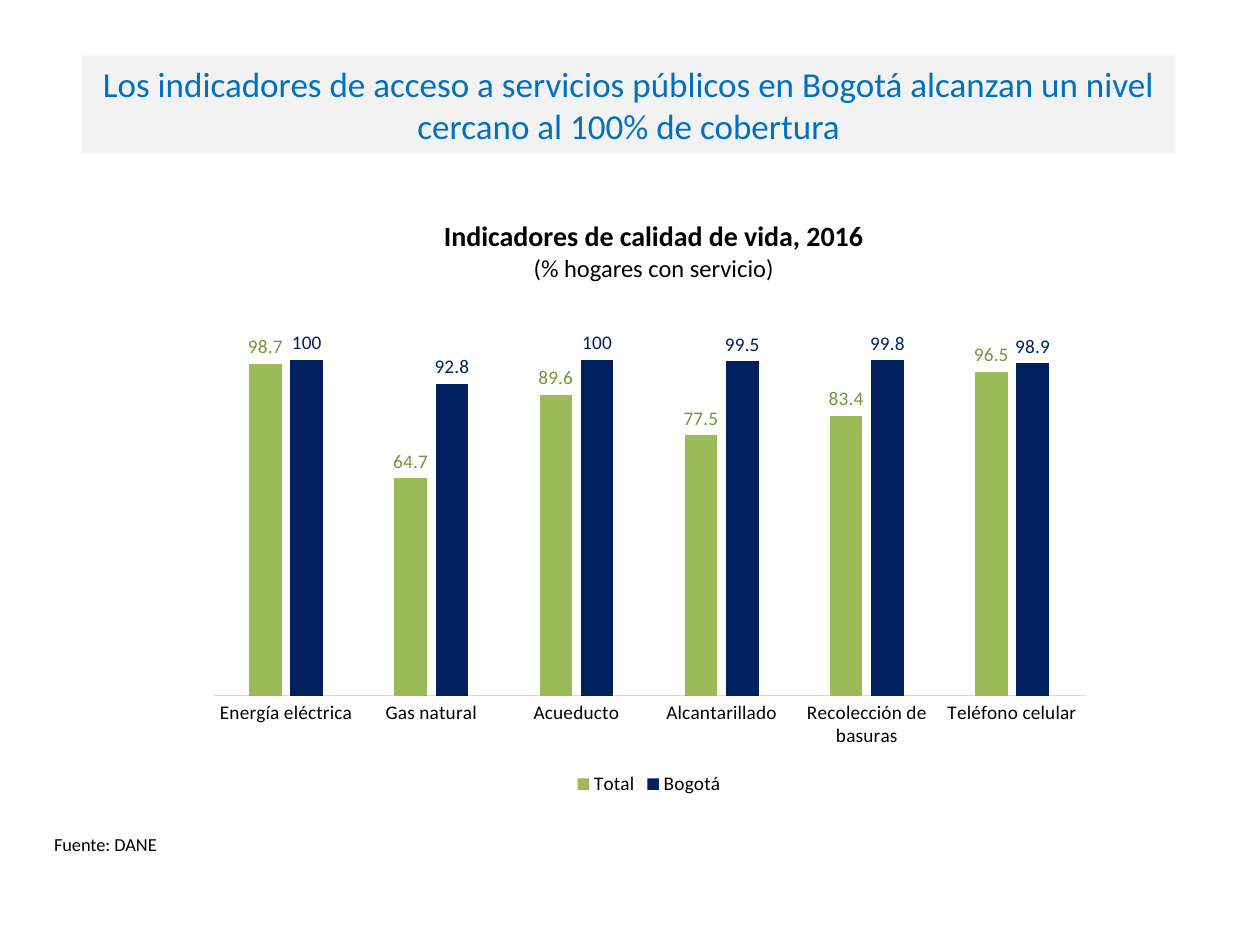
from pptx import Presentation
from pptx.chart.data import CategoryChartData
from pptx.dml.color import RGBColor
from pptx.enum import chart as charts, shapes, text
from pptx.util import Cm, Pt

FONT = "Calibri"
BLACK = RGBColor(0x00, 0x00, 0x00)
WHITE = RGBColor(0xFF, 0xFF, 0xFF)
PALE_GREY = RGBColor(0xF2, 0xF2, 0xF2)
AXIS_GREY = RGBColor(0xD9, 0xD9, 0xD9)
BLUE = RGBColor(0x00, 0x70, 0xC0)
GREEN = RGBColor(0x9B, 0xBB, 0x59)
DARK_GREEN = RGBColor(0x77, 0x93, 0x3C)
NAVY = RGBColor(0x00, 0x20, 0x60)


def style_font(font, size, color, bold=False):
    font.name = FONT
    font.size = Pt(size)
    font.color.rgb = color
    font.bold = bold


deck = Presentation()
deck.slide_width = Cm(25.4)
deck.slide_height = Cm(19.05)
page = deck.slides.add_slide(deck.slide_layouts[6])

banners = [
    ("Fuente: DANE", (0.84, 16.64, 3.1, 0.76), WHITE, 10.5, BLACK, text.PP_ALIGN.LEFT),
    ("Los indicadores de acceso a servicios públicos en Bogotá alcanzan un nivel "
     "cercano al 100% de cobertura",
     (1.65, 1.12, 22.05, 1.96), PALE_GREY, 20, BLUE, text.PP_ALIGN.CENTER),
]
for wording, place, fill, size, color, alignment in banners:
    box = page.shapes.add_shape(shapes.MSO_SHAPE.RECTANGLE, *map(Cm, place))
    box.shadow.inherit = False
    box.fill.solid()
    box.fill.fore_color.rgb = fill
    box.line.fill.background()
    box.text_frame.word_wrap = True
    box.text_frame.vertical_anchor = text.MSO_ANCHOR.MIDDLE
    box.text_frame.text = wording
    para = box.text_frame.paragraphs[0]
    para.alignment = alignment
    style_font(para.runs[0].font, size, color)

heading = page.shapes.add_textbox(Cm(7.49), Cm(4.29), Cm(11.38), Cm(1.55))
heading.text_frame.word_wrap = True
para = heading.text_frame.paragraphs[0]
para.text = "Indicadores de calidad de vida, 2016\v(% hogares con servicio)"
para.alignment = text.PP_ALIGN.CENTER
title_span, unit_span = para.runs
style_font(title_span.font, 16, BLACK, True)
style_font(unit_span.font, 14, BLACK)

series_styles = [
    ("Total", (98.7, 64.7, 89.6, 77.5, 83.4, 96.5), GREEN, DARK_GREEN),
    ("Bogotá", (100, 92.8, 100, 99.5, 99.8, 98.9), NAVY, NAVY),
]
data = CategoryChartData()
data.categories = ["Energía eléctrica", "Gas natural", "Acueducto",
                   "Alcantarillado", "Recolección de basuras", "Teléfono celular"]
for name, values, _, _ in series_styles:
    data.add_series(name, values)

chart = page.shapes.add_chart(
    charts.XL_CHART_TYPE.COLUMN_CLUSTERED,
    Cm(3.94), Cm(5.69), Cm(18.29), Cm(10.46), data).chart
style_font(chart.font, 10, BLACK)
chart.has_title = False
chart.has_legend = True
chart.legend.position = charts.XL_LEGEND_POSITION.BOTTOM
chart.legend.include_in_layout = False
style_font(chart.legend.font, 11, BLACK)

category_axis = chart.category_axis
category_axis.major_tick_mark = charts.XL_TICK_MARK.NONE
category_axis.format.line.color.rgb = AXIS_GREY
category_axis.format.line.width = Pt(0.75)
style_font(category_axis.tick_labels.font, 11, BLACK)

value_axis = chart.value_axis
value_axis.visible = False
value_axis.has_major_gridlines = False
value_axis.minimum_scale = 0
value_axis.maximum_scale = 120

plot = chart.plots[0]
plot.gap_width = 219
plot.overlap = -27
plot.vary_by_categories = False
for series, (_, _, fill, label_color) in zip(plot.series, series_styles):
    series.format.fill.solid()
    series.format.fill.fore_color.rgb = fill
    labels = series.data_labels
    labels.show_value = True
    labels.position = charts.XL_LABEL_POSITION.OUTSIDE_END
    style_font(labels.font, 11, label_color)

deck.save("out.pptx")
